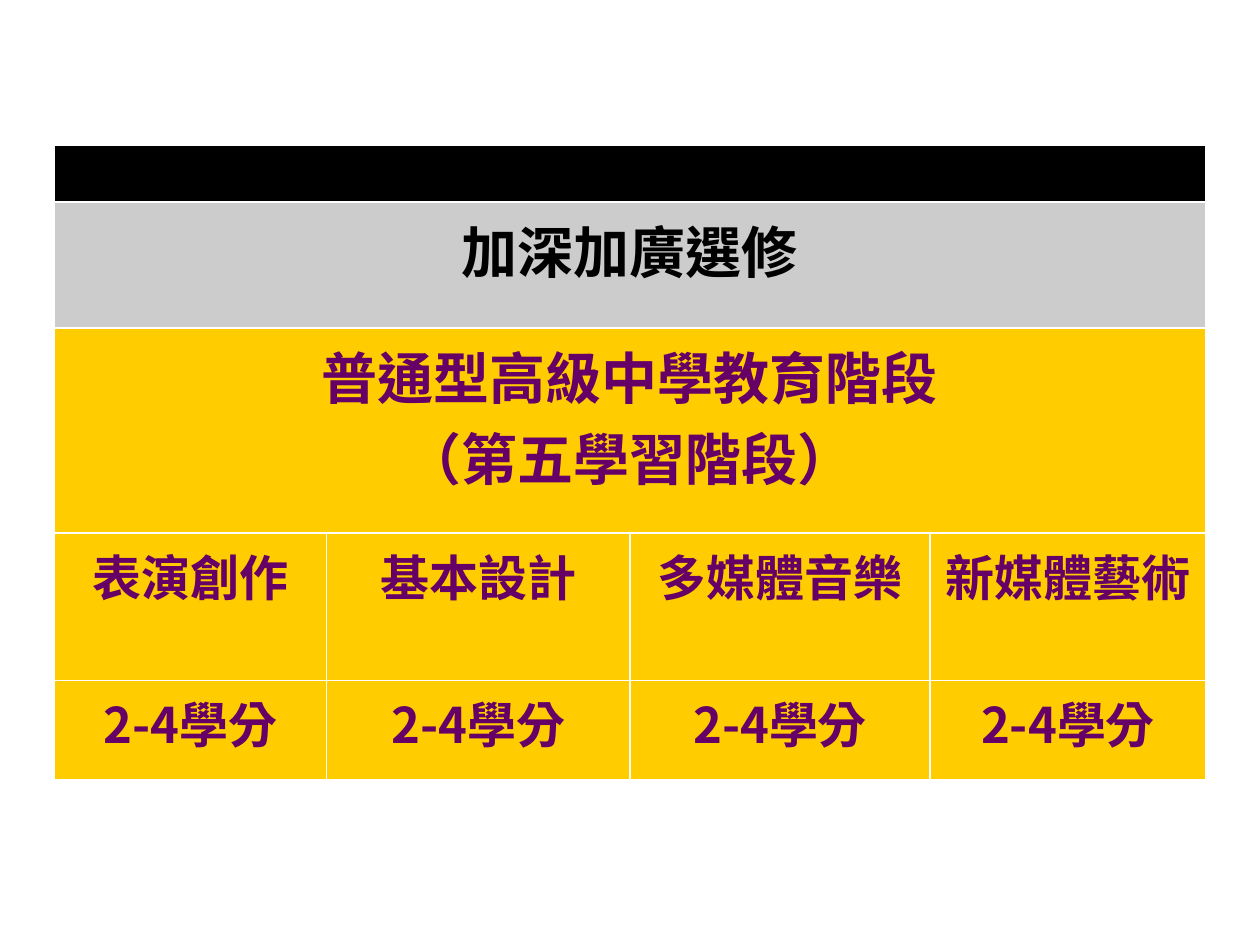
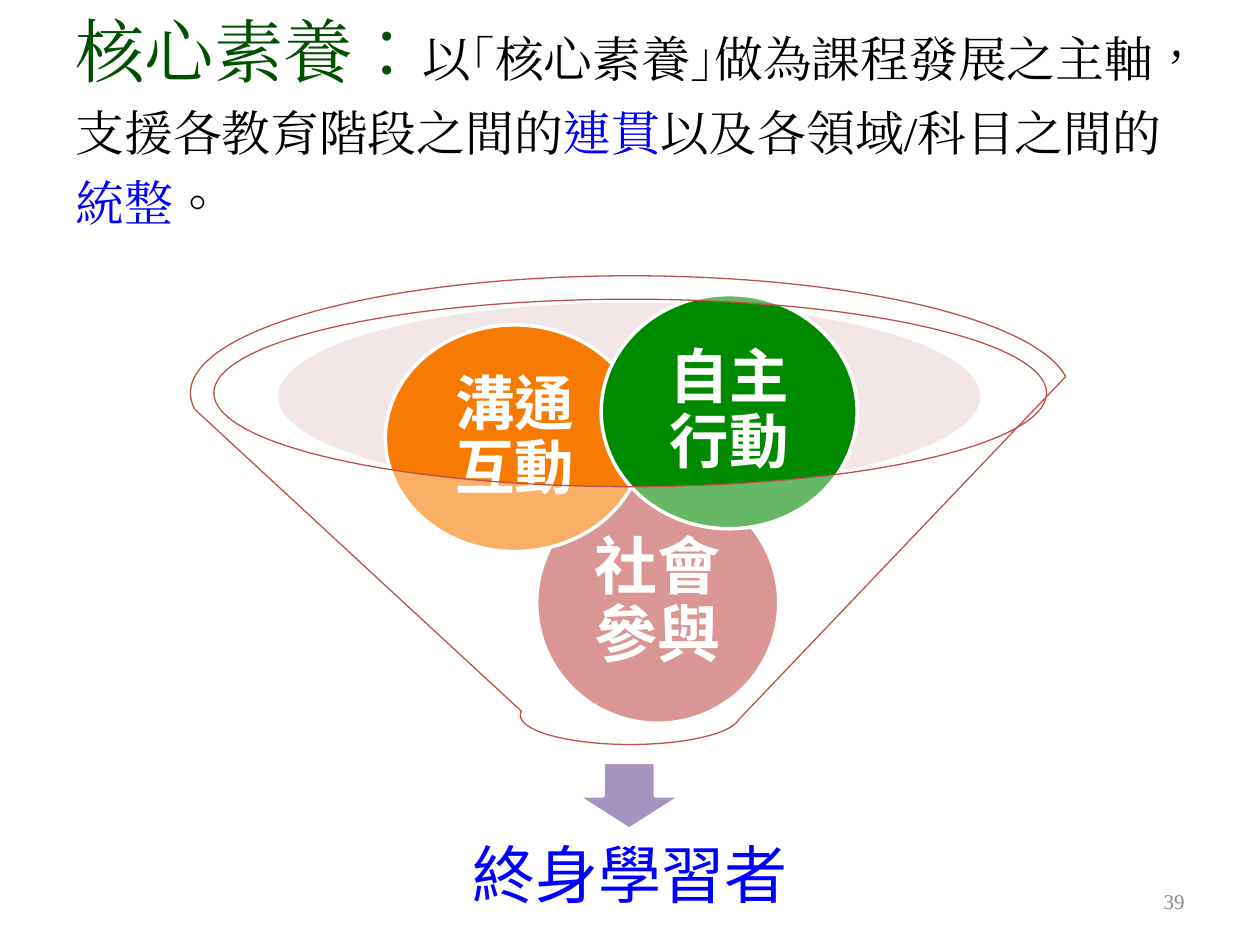
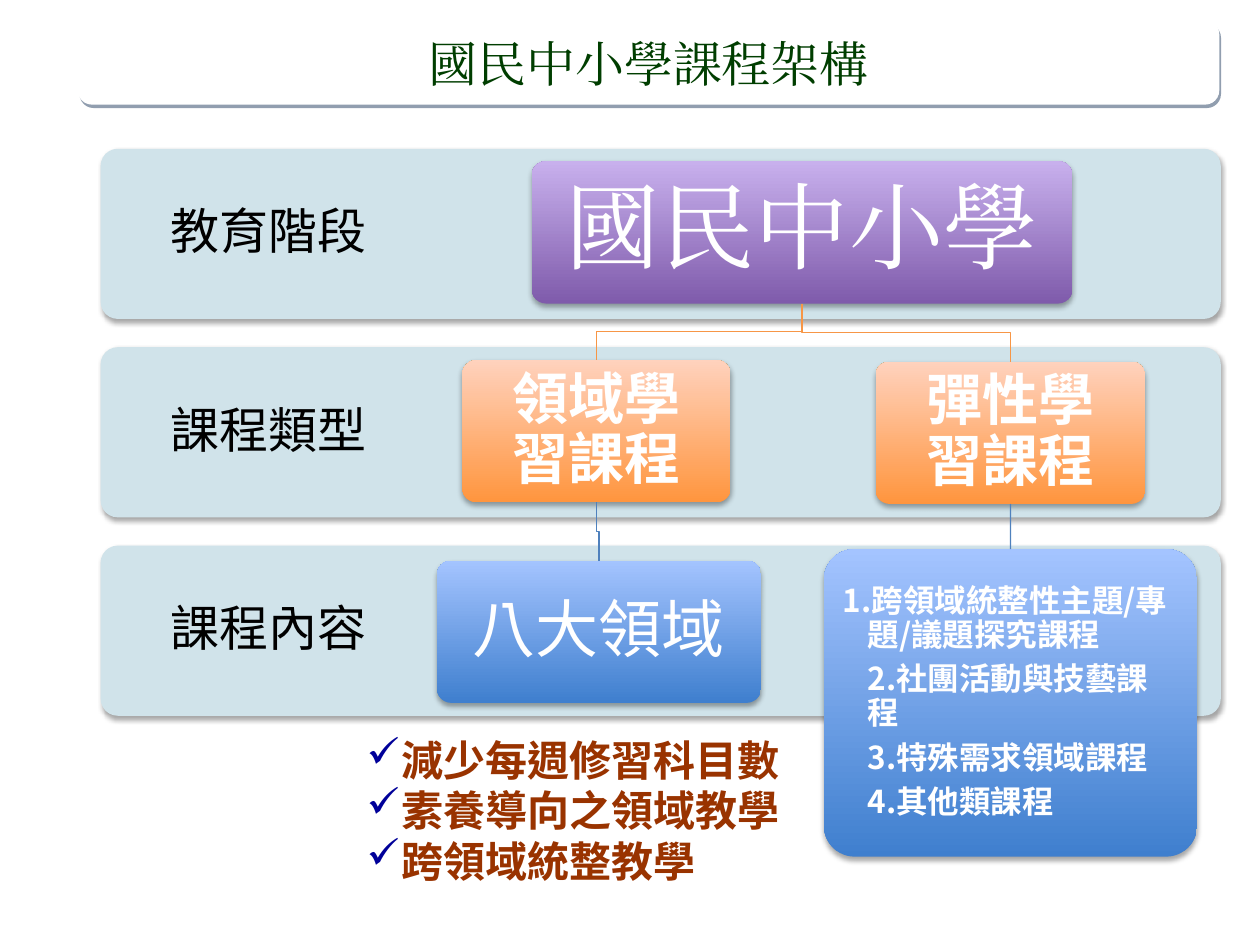
"""Build three slides on the arts and core competency curriculum."""
from lxml.etree import SubElement
from pptx import Presentation
from pptx.dml.color import RGBColor
from pptx.enum.shapes import MSO_CONNECTOR, MSO_SHAPE
from pptx.enum.text import MSO_ANCHOR, MSO_AUTO_SIZE, PP_ALIGN
from pptx.oxml.ns import qn
from pptx.util import Cm, Pt

SERIF = "Times New Roman"
SANS = "Noto Sans CJK SC"
TABLE = "Noto Sans CJK TC"
WHITE, BLACK, BLUE = "FFFFFF", "000000", "0000FF"
GOLD, PLUM = "FFCC00", "660066"
ORANGE, STEEL, RED = "F79646", "4F81BD", "C0504D"
LILAC = ("7F5BAB", "C8B0ED")
PEACH = ("FF953E", "FFD2BD")
AZURE = ("3F7FCE", "A4C4FF")
SOFT = (BLACK, 35, 3.1, 1.8, 90)
HARD = ("243F60", 50, 0, 2.2, 63)


def rgb(code):
    """Turn a hex string into a colour."""
    return RGBColor.from_string(code)


def node(root, tag, **attrs):
    """Add an XML child with the given attributes."""
    return SubElement(root, qn(tag), {k: str(v) for k, v in attrs.items()})


def place(item, box):
    """Set the position and size of a shape in centimetres."""
    item.left, item.top, item.width, item.height = map(Cm, box)


class Deck:
    """Hold the style and the current slide."""

    def __init__(self):
        """Start an empty deck."""
        self.prs = Presentation()
        self.prs.slide_width, self.prs.slide_height = Cm(25.4), Cm(19.05)

    def page(self, titled=False):
        """Add a slide and make it current."""
        layout = self.prs.slide_layouts[5 if titled else 6]
        self.shapes = self.prs.slides.add_slide(layout).shapes

    def face(self, run, size, color, font=SANS, bold=False):
        """Format one run."""
        run.font.size, run.font.bold, run.font.name = Pt(size), bold, font
        run.font.color.rgb = rgb(color)
        props = run.font._element
        props.set("lang", "zh-TW")
        node(props, "a:ea", typeface=font)

    def words(self, frame, text, size, color, font=SANS, bold=False,
              align=PP_ALIGN.CENTER, gap=None, inset=None):
        """Fill a text frame with evenly styled paragraphs."""
        frame.text = text
        frame.word_wrap = True
        frame.vertical_anchor = MSO_ANCHOR.MIDDLE
        if inset is not None:
            frame.margin_left = frame.margin_right = Cm(inset)
            frame.margin_top = frame.margin_bottom = Cm(inset)
        for para in frame.paragraphs:
            para.alignment = align
            if gap:
                para.line_spacing = gap
            for run in para.runs:
                self.face(run, size, color, font, bold)

    def title(self, box, parts, align, gap=None):
        """Place the title and fill it with styled runs."""
        head = self.shapes.title
        place(head, box)
        frame = head.text_frame
        frame.auto_size = MSO_AUTO_SIZE.NONE
        frame.vertical_anchor = MSO_ANCHOR.MIDDLE
        para = frame.paragraphs[0]
        para.alignment = align
        if gap:
            para.line_spacing = gap
        for text, size, color in parts:
            run = para.add_run()
            run.text = text
            self.face(run, size, color, SERIF)
        return head

    def label(self, box, text, size, color, **look):
        """Add a text box."""
        item = self.shapes.add_textbox(*map(Cm, box))
        self.words(item.text_frame, text, size, color, **look)
        return item

    def shape(self, kind, box, fill, line=None, width=2, alpha=None,
              shade=None, adj=None):
        """Add a preset shape with a plain or a two-colour fill."""
        item = self.shapes.add_shape(kind, *map(Cm, box))
        item.shadow.inherit = False
        if adj:
            item.adjustments[0] = adj
        if isinstance(fill, tuple):
            item.fill.gradient()
            item.fill.gradient_angle = 90
            for stop, code in zip(item.fill.gradient_stops, fill):
                stop.color.rgb = rgb(code)
        else:
            item.fill.solid()
            item.fill.fore_color.rgb = rgb(fill)
        props = item.element.spPr
        if alpha:
            tint = props.find(qn("a:solidFill"))[0]
            node(tint, "a:alpha", val=alpha * 1000)
        if line:
            item.line.color.rgb = rgb(line)
            item.line.width = Pt(width)
        else:
            item.line.fill.background()
        if shade:
            code, dense, blur, dist, turn = shade
            cast = node(props.find(qn("a:effectLst")), "a:outerShdw",
                        blurRad=Pt(blur), dist=Pt(dist), dir=turn * 60000,
                        algn="ctr", rotWithShape=0)
            node(node(cast, "a:srgbClr", val=code), "a:alpha",
                 val=dense * 1000)
        return item

    def card(self, box, fill, text=None, size=28, bold=False, **look):
        """Add a rounded box with a soft shadow."""
        item = self.shape(MSO_SHAPE.ROUNDED_RECTANGLE, box, fill,
                          shade=SOFT, adj=0.1)
        if text:
            self.words(item.text_frame, text, size, WHITE, bold=bold,
                       gap=0.9, **{"inset": 0.4, **look})
        return item

    def ball(self, box, fill, text, size):
        """Add a white-edged circle with bold text."""
        item = self.shape(MSO_SHAPE.OVAL, box, fill, WHITE)
        self.words(item.text_frame, text, size, WHITE, bold=True, gap=0.9,
                   inset=0.13)

    def elbow(self, top, low, color):
        """Draw a stepped line from one box down to another."""
        left, right = (b.left + b.width // 2 for b in (top, low))
        start, end = top.top + top.height, low.top
        mid = (start + end) // 2
        pen = self.shapes.build_freeform(left, start)
        pen.add_line_segments([(left, mid), (right, mid), (right, end)],
                              close=False)
        item = pen.convert_to_shape()
        item.shadow.inherit = False
        item.fill.background()
        item.line.color.rgb = rgb(color)
        item.line.width = Pt(0.75)

    def join(self, top, low, color):
        """Draw a straight line from one box down to another."""
        item = self.shapes.add_connector(MSO_CONNECTOR.STRAIGHT, 0, 0, 0, 0)
        item.begin_connect(top, 2)
        item.end_connect(low, 0)
        item.line.color.rgb = rgb(color)
        item.line.width = Pt(0.75)
        node(item.element.spPr, "a:effectLst")

    def table(self, box, cols, rows):
        """Add a table; a row with one text spans all columns."""
        grid = self.shapes.add_table(len(rows), len(cols),
                                     *map(Cm, box)).table
        for col, width in zip(grid.columns, cols):
            col.width = Cm(width)
        for r, (high, texts, size, color, fill) in enumerate(rows):
            grid.rows[r].height = Cm(high)
            for c in range(len(cols)):
                self.cell(grid.cell(r, c), fill)
            if len(texts) == 1:
                grid.cell(r, 0).merge(grid.cell(r, len(cols) - 1))
            for c, text in enumerate(texts):
                if text:
                    cell = grid.cell(r, c)
                    self.words(cell.text_frame, text, size, color,
                               font=TABLE, bold=True)
                    cell.vertical_anchor = MSO_ANCHOR.TOP

    def cell(self, cell, fill):
        """Give a cell white borders and a fill."""
        props = cell._tc.get_or_add_tcPr()
        for side in "LRTB":
            edge = node(props, f"a:ln{side}", w=Pt(1))
            node(node(edge, "a:solidFill"), "a:srgbClr", val=WHITE)
        cell.fill.solid()
        cell.fill.fore_color.rgb = rgb(fill)


def units(deck):
    """Build the table of elective credits."""
    deck.page()
    names = ["表演創作", "基本設計", "多媒體音樂", "新媒體藝術"]
    stage = "普通型高級中學教育階段\n（第五學習階段）"
    deck.table((1.09, 2.93, 23.22, 12.8), [5.49, 6.12, 6.05, 5.56], [
        (1.14, [""], 18, WHITE, BLACK),
        (2.54, ["加深加廣選修"], 32, BLACK, "CCCCCC"),
        (4.14, [stage], 32, PLUM, GOLD),
        (2.97, names, 28, PLUM, GOLD),
        (2.01, ["2-4學分"] * len(names), 28, PLUM, GOLD)])


def core(deck):
    """Build the funnel of core competencies."""
    deck.page(titled=True)
    deck.title((1.27, 1.14, 22.86, 2.82), [
        ("核心素養：", 39.6, "005000"),
        ("以｢核心素養｣做為課程發展之主軸，支援各教育階段之間的", 27.9, BLACK),
        ("連貫", 27.9, BLUE),
        ("以及各領域/科目之間的", 27.9, BLACK),
        ("統整", 27.9, BLUE),
        ("。", 27.9, BLACK)], PP_ALIGN.LEFT, Pt(40))
    deck.shape(MSO_SHAPE.OVAL, (5.61, 6.1, 14.15, 3.78), "E2C2C2", alpha=40)
    deck.shape(MSO_SHAPE.DOWN_ARROW, (11.63, 15.37, 2.11, 1.35), "A793BF",
               WHITE)
    deck.label((7.65, 16.43, 10.11, 2.54), "終身學習者", 36, BLUE, gap=0.9,
               inset=0.7)
    deck.ball((10.82, 9.73, 4.88, 4.85), RED, "社會參與", 36)
    deck.ball((7.77, 6.55, 5.21, 4.57), "F67B00", "溝通互動", 34)
    deck.ball((12.12, 5.94, 5.16, 4.72), "008A00", "自主行動", 34)
    deck.shape(MSO_SHAPE.FUNNEL, (3.84, 5.56, 17.73, 9.45), WHITE, RED, 0.75,
               alpha=40)
    deck.label((18.21, 17.65, 5.92, 1.02), "39", 12, "898989", font=SERIF,
               align=PP_ALIGN.RIGHT)


def frame(deck):
    """Build the chart of the school curriculum."""
    deck.page(titled=True)
    box = (1.57, 0.41, 23.01, 1.7)
    panel = deck.shape(MSO_SHAPE.ROUNDED_RECTANGLE, box, WHITE, shade=HARD,
                       adj=0.167)
    head = deck.title(box, [("國民中小學課程架構", 28, "003E00")],
                      PP_ALIGN.CENTER)
    panel.element.addnext(head.element)
    for i, name in enumerate(["教育階段", "課程類型", "課程內容"]):
        top = 3 + 4 * i
        deck.card((2.03, top, 22.58, 3.43), "D0E3EA")
        deck.label((2.03, top, 6.78, 3.43), name, 28, BLACK, gap=0.9,
                   inset=0.56)
    school = deck.card((10.72, 3.25, 10.9, 2.87), LILAC, "國民中小學", 54,
                       font=SERIF)
    field = deck.card((9.32, 7.26, 5.41, 2.87), PEACH, "領域學習課程", 32, True)
    flex = deck.card((17.65, 7.29, 5.44, 2.87), PEACH, "彈性學習課程", 32, True)
    eight = deck.card((8.81, 11.3, 6.53, 2.87), AZURE, "八大領域", 36)
    kinds = deck.card((16.61, 11.07, 7.52, 6.2), AZURE, "\n".join([
        "1.跨領域統整性主題/專題/議題探究課程", "2.社團活動與技藝課程",
        "3.特殊需求領域課程", "4.其他類課程"]), 18, True,
        align=PP_ALIGN.LEFT, inset=0.2)
    for i, para in enumerate(kinds.text_frame.paragraphs):
        para.space_after = Pt(6)
        props = para._p.get_or_add_pPr()
        props.set("marL", str(Cm(0.5)))
        props.set("indent", str(0 if i else -Cm(0.5)))
    deck.elbow(school, field, ORANGE)
    deck.elbow(school, flex, ORANGE)
    deck.elbow(field, eight, STEEL)
    deck.join(flex, kinds, STEEL)
    notes = deck.label((7.14, 14.68, 9.12, 3.33), "\n".join([
        "減少每週修習科目數", "素養導向之領域教學", "跨領域統整教學"]),
        24, "993300", font="Calibri", bold=True, align=PP_ALIGN.LEFT)
    notes.text_frame.vertical_anchor = MSO_ANCHOR.TOP
    for para in notes.text_frame.paragraphs:
        props = para._p.get_or_add_pPr()
        props.set("marL", str(Cm(0.7)))
        props.set("indent", str(-Cm(0.7)))
        node(node(props, "a:buClr"), "a:srgbClr", val="000099")
        node(props, "a:buChar", char="✓")


def main():
    """Build and save the deck."""
    deck = Deck()
    units(deck)
    core(deck)
    frame(deck)
    deck.prs.save("out.pptx")


if __name__ == "__main__":
    main()
